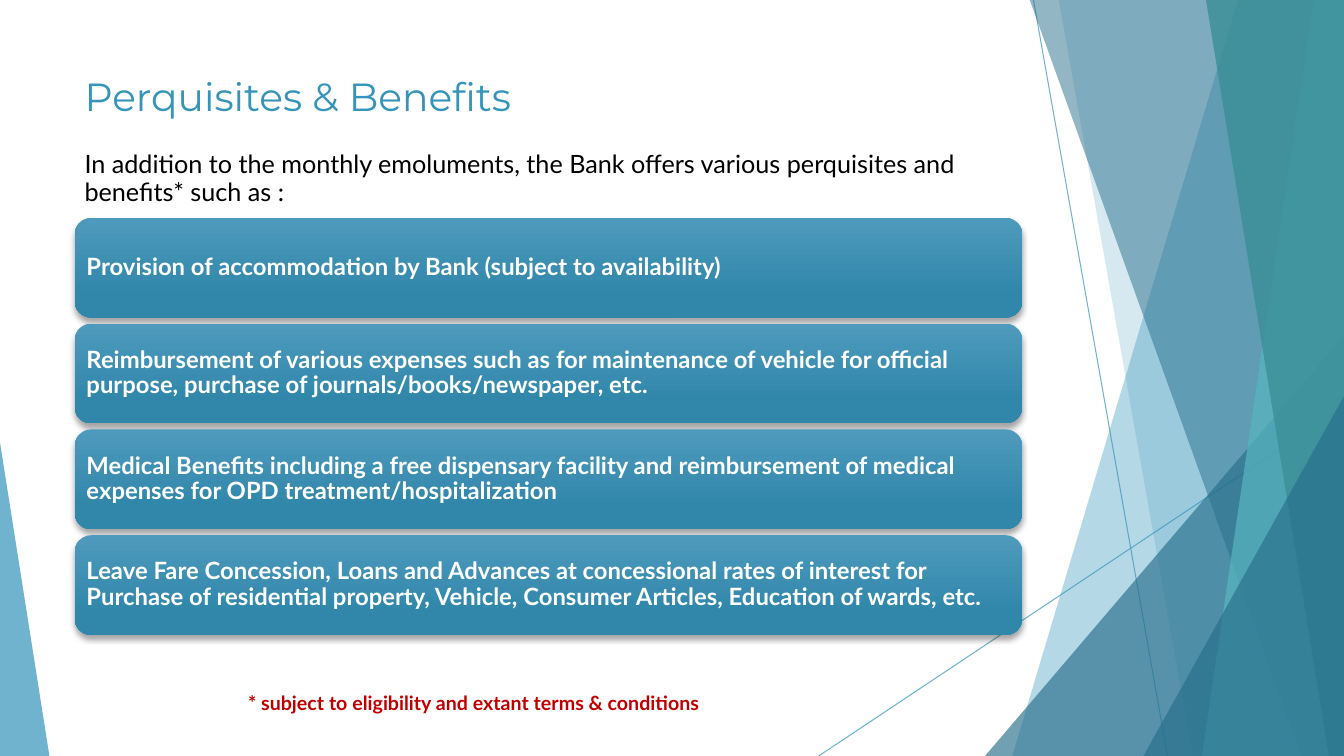
import dataclasses

import lxml.etree
import pptx
import pptx.dml.color
import pptx.enum.dml
import pptx.enum.shapes
import pptx.enum.text
import pptx.oxml.ns
import pptx.util

Inches = pptx.util.Inches
Pt = pptx.util.Pt
RGB = pptx.dml.color.RGBColor.from_string
qn = pptx.oxml.ns.qn
MSO_SHAPE = pptx.enum.shapes.MSO_SHAPE
ALIGN = pptx.enum.text.PP_ALIGN
ANCHOR = pptx.enum.text.MSO_ANCHOR
AUTO_SIZE = pptx.enum.text.MSO_AUTO_SIZE


@dataclasses.dataclass(frozen=True)
class Theme:
    """Colours, fonts and type sizes of the slide."""

    accent: str = "3494BA"
    accent_dark: str = "276F8B"
    teal: str = "58B6C0"
    teal_dark: str = "3A8F98"
    card_top: str = "4E9ABD"
    card_bottom: str = "3087AA"
    white: str = "FFFFFF"
    black: str = "000000"
    note: str = "C00000"
    head_font: str = "Montserrat"
    body_font: str = "Lato"
    title_size: int = 28
    intro_size: int = 18
    card_size: int = 17
    note_size: int = 14


THEME = Theme()
WIDTH, HEIGHT = 13.33, 7.5

BENEFITS = [
    "Provision of accommodation by Bank (subject to availability)",
    "Reimbursement of various expenses such as for maintenance of vehicle for official "
    "purpose, purchase of journals/books/newspaper, etc.",
    "Medical Benefits including a free dispensary facility and reimbursement of medical "
    "expenses for OPD treatment/hospitalization",
    "Leave Fare Concession, Loans and Advances at concessional rates of interest for "
    "Purchase of residential property, Vehicle, Consumer Articles, Education of wards, etc.",
]


def set_attrs(obj, values):
    """Set each named value on the object."""
    for name, value in values.items():
        setattr(obj, name, value)


def set_alpha(sp, percent):
    """Make the colours of a shape partly transparent."""
    for clr in sp.element.spPr.iter(qn("a:srgbClr")):
        lxml.etree.SubElement(clr, qn("a:alpha"), val=str(percent * 1000))


def write(sp, text, font, color, frame, para):
    """Put one formatted paragraph into a shape."""
    tf = sp.text_frame
    set_attrs(tf, {"word_wrap": True, **frame})
    p = tf.paragraphs[0]
    set_attrs(p, para)
    r = p.add_run()
    r.text = text
    set_attrs(r.font, font)
    r.font.color.rgb = RGB(color)


def paint(sp, color, alpha):
    """Give a shape a flat transparent fill with no outline."""
    sp.shadow.inherit = False
    sp.fill.solid()
    sp.fill.fore_color.rgb = RGB(color)
    sp.line.fill.background()
    set_alpha(sp, alpha)


def add_ray(slide, start, end):
    """Draw a thin accent line."""
    line = slide.shapes.add_connector(
        pptx.enum.shapes.MSO_CONNECTOR.STRAIGHT, *map(Inches, start + end))
    line.line.width = Pt(0.75)
    line.line.color.rgb = RGB(THEME.accent)
    set_alpha(line, 70)
    lxml.etree.SubElement(line.element.spPr, qn("a:effectLst"))


def add_band(slide, top_x, bottom_x, color, alpha):
    """Draw a slanted band that reaches the right edge of the slide."""
    top = -0.01
    corners = [(top_x, top), (WIDTH, top), (WIDTH, HEIGHT), (bottom_x, HEIGHT)]
    points = [(Inches(x), Inches(y)) for x, y in corners]
    builder = slide.shapes.build_freeform(*points[0])
    builder.add_line_segments(points[1:], close=True)
    paint(builder.convert_to_shape(), color, alpha)


def add_wedge(slide, left, top, width, apex, color, alpha):
    """Draw a triangle that stands on the bottom edge of the slide."""
    sp = slide.shapes.add_shape(
        MSO_SHAPE.ISOSCELES_TRIANGLE,
        *map(Inches, (left, top, width, HEIGHT - top)))
    sp.adjustments[0] = apex
    paint(sp, color, alpha)


def add_backdrop(slide):
    """Layer the facets at the sides of the slide."""
    add_ray(slide, (10.25, 0), (11.58, HEIGHT))
    add_ray(slide, (WIDTH, 4.03), (8.12, HEIGHT))
    add_band(slide, 12.28, 10.04, THEME.accent, 36)
    add_band(slide, 10.5, 11.83, THEME.accent, 20)
    add_wedge(slide, 9.77, 3.33, 3.56, 1, THEME.accent_dark, 66)
    add_band(slide, 10.21, 12.91, THEME.accent_dark, 50)
    add_band(slide, 13.03, 11.92, THEME.teal, 70)
    add_band(slide, 11.96, 13.18, THEME.teal_dark, 80)
    add_wedge(slide, 11.34, 3.93, 1.99, 1, THEME.accent_dark, 66)
    add_wedge(slide, 0, 4.39, 0.49, 0, THEME.accent, 70)


def add_title(slide, box, text):
    """Place the slide title."""
    sp = slide.shapes.title
    set_attrs(sp, dict(zip(("left", "top", "width", "height"), map(Inches, box))))
    write(sp, text,
          {"name": THEME.head_font, "size": Pt(THEME.title_size)}, THEME.accent,
          {"vertical_anchor": ANCHOR.TOP, "auto_size": AUTO_SIZE.NONE},
          {"alignment": ALIGN.LEFT})


def add_text(slide, box, text, size, color, bold, align):
    """Place a text box that grows with its text."""
    sp = slide.shapes.add_textbox(*map(Inches, box))
    write(sp, text,
          {"name": THEME.body_font, "size": Pt(size), "bold": bold}, color,
          {"auto_size": AUTO_SIZE.SHAPE_TO_FIT_TEXT},
          {"alignment": align, "line_spacing": 0.9})


def add_card(slide, box, text):
    """Place one rounded card with a gradient and a soft shadow."""
    sp = slide.shapes.add_shape(MSO_SHAPE.ROUNDED_RECTANGLE, *map(Inches, box))
    sp.line.fill.background()
    sp.fill.gradient()
    sp.fill.gradient_angle = 270
    stops = [(0, THEME.card_top), (0.78, THEME.card_bottom)]
    for stop, (position, color) in zip(sp.fill.gradient_stops, stops):
        stop.position = position
        stop.color.rgb = RGB(color)
    sp.shadow.inherit = False
    shadow = lxml.etree.SubElement(
        sp.element.spPr.find(qn("a:effectLst")), qn("a:outerShdw"),
        blurRad=str(Pt(4)), dist=str(Pt(3)), dir="5400000", rotWithShape="0")
    clr = lxml.etree.SubElement(shadow, qn("a:srgbClr"), val=THEME.black)
    lxml.etree.SubElement(clr, qn("a:alpha"), val="35000")
    margins = ("margin_left", "margin_top", "margin_right", "margin_bottom")
    write(sp, text,
          {"name": THEME.body_font, "size": Pt(THEME.card_size), "bold": True},
          THEME.white,
          {"vertical_anchor": ANCHOR.MIDDLE, **dict.fromkeys(margins, Inches(0.07))},
          {"alignment": ALIGN.LEFT, "line_spacing": 0.9})


def add_cards(slide, box, texts, gap):
    """Stack equal cards in the box."""
    left, top, width, height = box
    card = (height - gap * (len(texts) - 1)) / len(texts)
    for i, text in enumerate(texts):
        add_card(slide, (left, top + i * (card + gap), width, card), text)


def add_benefits_slide(prs):
    """Build the perquisites and benefits slide."""
    slide = prs.slides.add_slide(prs.slide_layouts.get_by_name("Title Only"))
    left, width = 0.74, 9.4
    add_backdrop(slide)
    add_title(slide, (left, 0.67, width, 1.44), "Perquisites & Benefits")
    add_text(slide, (left, 1.46, width, 0.65),
             "In addition to the monthly emoluments, the Bank offers various "
             "perquisites and benefits* such as :",
             THEME.intro_size, THEME.black, False, ALIGN.LEFT)
    add_cards(slide, (left, 2.16, width, 4.14), BENEFITS, 0.06)
    add_text(slide, (0, 6.83, width, 0.31),
             "* subject to eligibility and extant terms & conditions",
             THEME.note_size, THEME.note, True, ALIGN.CENTER)


def main():
    """Create and save the presentation."""
    prs = pptx.Presentation()
    set_attrs(prs, {"slide_width": Inches(WIDTH), "slide_height": Inches(HEIGHT)})
    add_benefits_slide(prs)
    prs.save("out.pptx")


if __name__ == "__main__":
    main()
